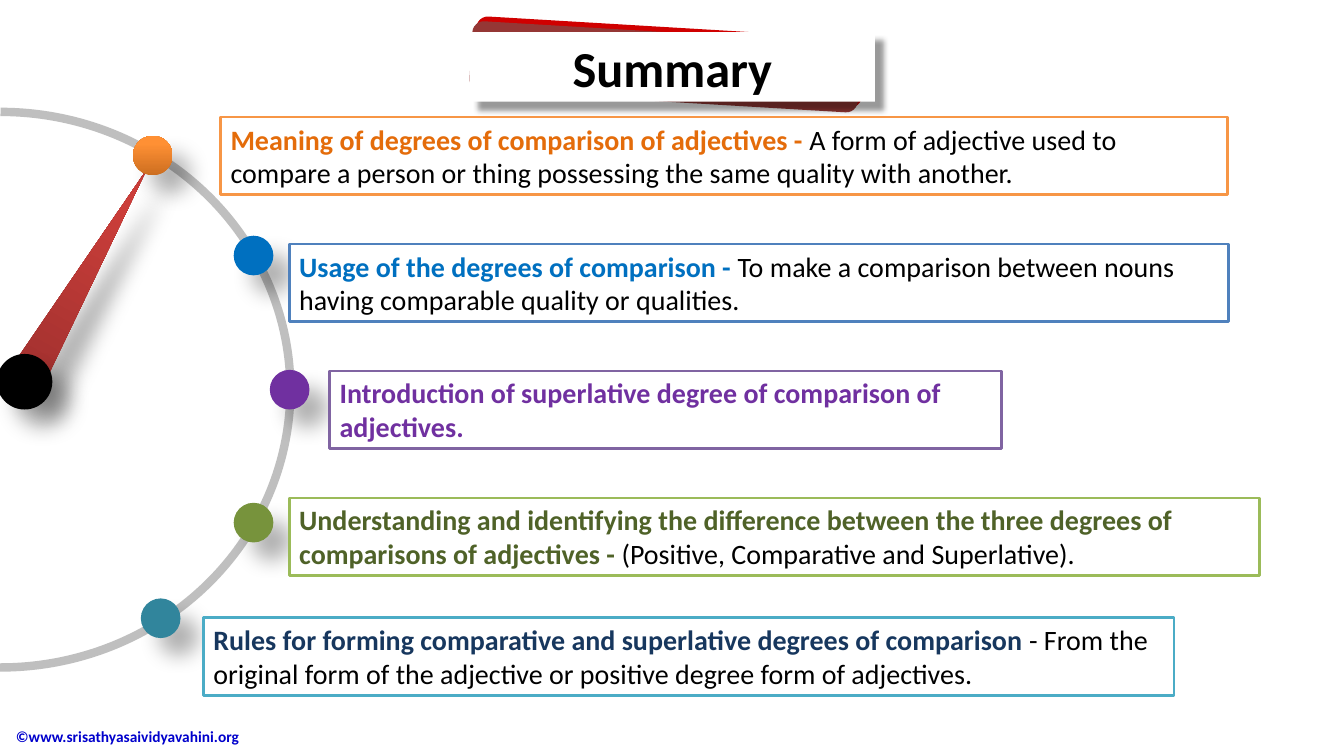
from lxml.etree import SubElement
from pptx import Presentation
from pptx.dml.color import RGBColor
from pptx.enum.shapes import MSO_SHAPE
from pptx.enum.text import MSO_ANCHOR, MSO_AUTO_SIZE, PP_ALIGN
from pptx.oxml.ns import qn
from pptx.util import Cm, Pt

BLACK = RGBColor(0x00, 0x00, 0x00)
WHITE = RGBColor(0xFF, 0xFF, 0xFF)
GREY = RGBColor(0xBF, 0xBF, 0xBF)
RED = RGBColor(0xD0, 0x00, 0x00)
DARK_RED = RGBColor(0x95, 0x37, 0x35)
LINK_BLUE = RGBColor(0x00, 0x00, 0xCC)
NEEDLE = (RGBColor(0x9C, 0x2F, 0x2D), RGBColor(0xCB, 0x3E, 0x3A))
ORANGE_DOT = (RGBColor(0xCC, 0x6E, 0x20), RGBColor(0xFF, 0x90, 0x34))
ORANGE = RGBColor(0xF7, 0x96, 0x46)
ORANGE_TEXT = RGBColor(0xE4, 0x6C, 0x0A)
BLUE = RGBColor(0x00, 0x70, 0xC0)
BLUE_LINE = RGBColor(0x4F, 0x81, 0xBD)
PURPLE = RGBColor(0x70, 0x30, 0xA0)
PURPLE_LINE = RGBColor(0x80, 0x64, 0xA2)
GREEN = RGBColor(0x77, 0x93, 0x3C)
GREEN_LINE = RGBColor(0x9B, 0xBB, 0x59)
GREEN_TEXT = RGBColor(0x4F, 0x62, 0x28)
TEAL = RGBColor(0x31, 0x85, 0x9C)
TEAL_LINE = RGBColor(0x4B, 0xAC, 0xC6)
NAVY_TEXT = RGBColor(0x17, 0x37, 0x5E)

# Content: heading, explanation, dot fill, line, heading colour,
# dot centre (x, y), box (left, top, width); lengths in cm
TITLE = "Summary"
COPYRIGHT = "©www.srisathyasaividyavahini.org"
POINTS = [
    ("Meaning of degrees of comparison of adjectives - ",
     "A form of adjective used to compare a person or thing possessing "
     "the same quality with another.",
     ORANGE_DOT, ORANGE, ORANGE_TEXT, (3.85, 3.92), (5.56, 2.95, 25.37)),
    ("Usage of the degrees of comparison - ",
     "To make a comparison between nouns having comparable quality or qualities.",
     BLUE, BLUE_LINE, BLUE, (6.39, 6.44), (7.29, 6.15, 23.67)),
    ("Introduction of superlative degree of comparison of adjectives.", "",
     PURPLE, PURPLE_LINE, PURPLE, (7.3, 9.82), (8.31, 9.35, 16.94)),
    ("Understanding and identifying the difference between the three degrees "
     "of comparisons of adjectives - ",
     "(Positive, Comparative and Superlative).",
     GREEN, GREEN_LINE, GREEN_TEXT, (6.39, 13.17), (7.29, 12.55, 24.46)),
    ("Rules for forming comparative and superlative degrees of comparison ",
     "- From the original form of the adjective or positive degree form of adjectives.",
     TEAL, TEAL_LINE, NAVY_TEXT, (4.05, 15.58), (5.13, 15.57, 24.46)),
]
DOT, BOX_HEIGHT = 1.0, 1.96
DIAL_SHADOW = (30, 15, 18)  # opacity %, blur pt, distance pt
TITLE_SHADOW = (40, 4, 8)


def add_shadow(sp, opacity, blur, distance):
    sp.shadow.inherit = False
    effects = sp._element.spPr.find(qn("a:effectLst"))
    outer = SubElement(effects, qn("a:outerShdw"), blurRad=str(Pt(blur)),
                       dist=str(Pt(distance)), dir="2700000", algn="tl",
                       rotWithShape="0")
    color = SubElement(outer, qn("a:srgbClr"), val="000000")
    SubElement(color, qn("a:alpha"), val=str(opacity * 1000))


def add_part(kind, bounds, fill, shadow=None, rotation=0):
    sp = s.shapes.add_shape(kind, *map(Cm, bounds))
    sp.rotation = rotation
    sp.shadow.inherit = False
    if fill is None:
        sp.fill.background()
    elif isinstance(fill, RGBColor):
        sp.fill.solid()
        sp.fill.fore_color.rgb = fill
    else:
        sp.fill.gradient()
        sp.fill.gradient_angle = 90
        for stop, color, position in zip(sp.fill.gradient_stops, fill, (0, 0.8)):
            stop.color.rgb = color
            stop.position = position
    sp.line.fill.background()
    if shadow:
        add_shadow(sp, *shadow)
    return sp


def add_run(p, text, size, color, bold):
    r = p.add_run()
    r.text = text
    for name, value in {"name": "Calibri", "size": Pt(size), "bold": bold}.items():
        setattr(r.font, name, value)
    r.font.color.rgb = color


prs = Presentation()
prs.slide_width, prs.slide_height = Cm(33.87), Cm(19.05)
s = prs.slides.add_slide(prs.slide_layouts[5])

# Copyright line
tf = s.shapes.add_textbox(Cm(0.15), Cm(18.03), Cm(8.97), Cm(1.04)).text_frame
tf.word_wrap = True
tf.vertical_anchor = MSO_ANCHOR.MIDDLE
add_run(tf.paragraphs[0], COPYRIGHT, 11, LINK_BLUE, True)

# Dial: needle, hub and rim
add_part(MSO_SHAPE.ISOSCELES_TRIANGLE, (1.6, 3.86, 0.99, 6.38), NEEDLE, DIAL_SHADOW, 30)
add_part(MSO_SHAPE.OVAL, (-0.08, 8.92, 1.4, 1.4), BLACK, DIAL_SHADOW)
rim = add_part(MSO_SHAPE.ARC, (-7.29, 2.82, 14.61, 14), None)
rim.adjustments[0], rim.adjustments[1] = 162, 54.57
rim.line.color.rgb = GREY
rim.line.width = Pt(6)

# Dots on the rim
for *_, dot, _, _, (x, y), _ in POINTS:
    add_part(MSO_SHAPE.OVAL, (x - DOT / 2, y - DOT / 2, DOT, DOT), dot, DIAL_SHADOW)

# Summary boxes
for heading, detail, _, line, color, _, bounds in POINTS:
    box = add_part(MSO_SHAPE.RECTANGLE, (*bounds, BOX_HEIGHT), WHITE)
    box.line.color.rgb = line
    box.line.width = Pt(2)
    tf = box.text_frame
    tf.word_wrap = True
    tf.vertical_anchor = MSO_ANCHOR.TOP
    p = tf.paragraphs[0]
    p.alignment = PP_ALIGN.LEFT
    add_run(p, heading, 20, color, True)
    if detail:
        add_run(p, detail, 20, BLACK, False)

# Title plate on two tilted cards
for left, top, color in ((11.96, 0.69, RED), (11.86, 0.81, DARK_RED)):
    add_part(MSO_SHAPE.ROUNDED_RECTANGLE, (left, top, 9.8, 1.75), color, rotation=3.4)
title = s.shapes.title
for name, value in {"left": 11.84, "top": 0.81, "width": 10.21, "height": 1.75}.items():
    setattr(title, name, Cm(value))
geometry = SubElement(title._element.spPr, qn("a:prstGeom"), prst="roundRect")
SubElement(geometry, qn("a:avLst"))
title.fill.solid()
title.fill.fore_color.rgb = WHITE
add_shadow(title, *TITLE_SHADOW)
tf = title.text_frame
tf.auto_size = MSO_AUTO_SIZE.NONE
tf.vertical_anchor = MSO_ANCHOR.MIDDLE
tf.paragraphs[0].alignment = PP_ALIGN.CENTER
add_run(tf.paragraphs[0], TITLE, 36, BLACK, True)
title._element.getparent().append(title._element)  # bring to front

prs.save("out.pptx")
